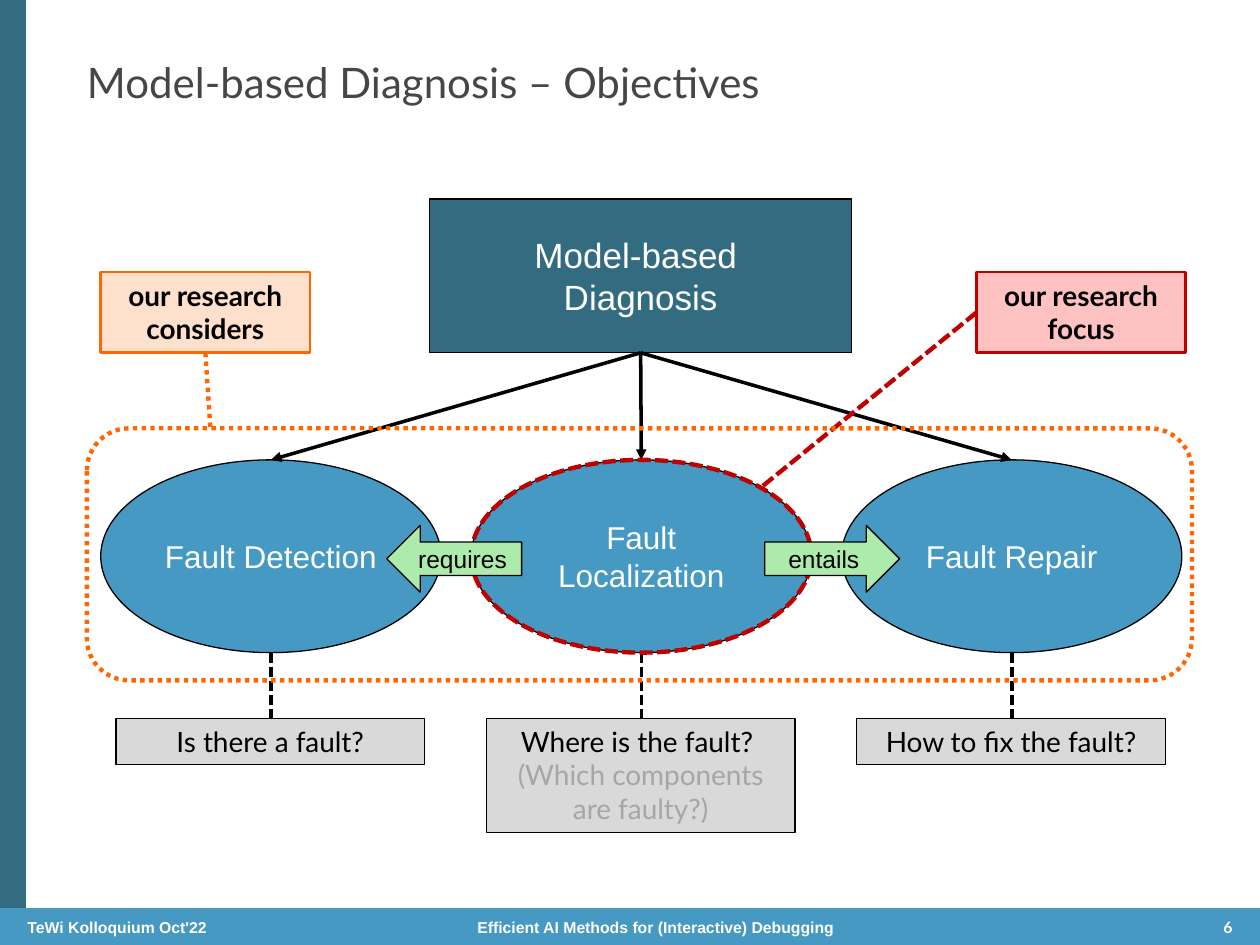
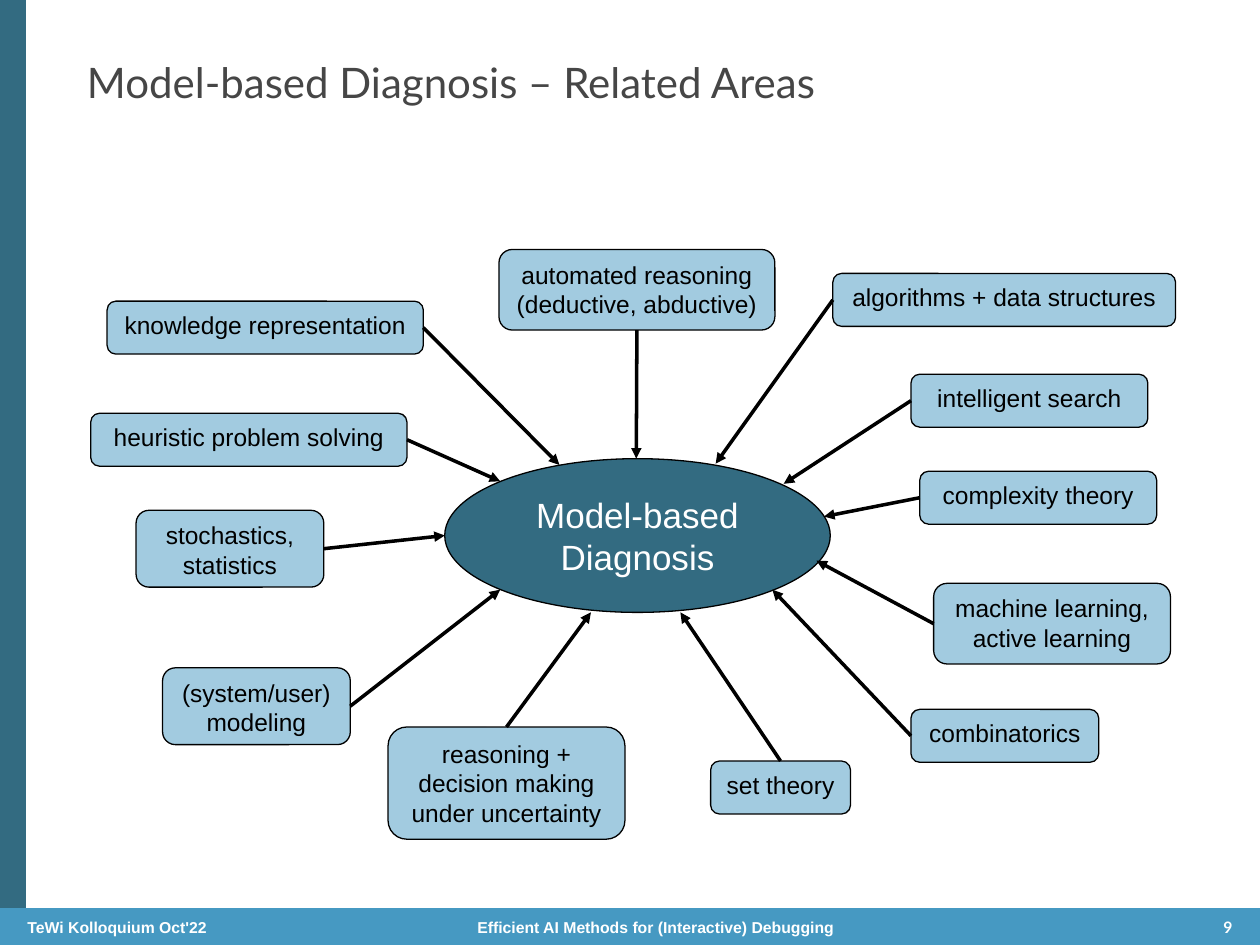
from lxml.etree import SubElement
from pptx import Presentation
from pptx.dml.color import RGBColor
from pptx.enum.dml import MSO_LINE
from pptx.enum.shapes import MSO_CONNECTOR, MSO_SHAPE
from pptx.enum.text import MSO_ANCHOR, PP_ALIGN
from pptx.oxml.ns import qn
from pptx.util import Inches, Pt

DARK, BLUE, BLACK, WHITE = "336B81", "4699C2", "000000", "FFFFFF"
TITLE_GREY, BOX_GREY, MUTED = "464646", "D9D9D9", "A6A6A6"
RED, PINK, ORANGE, PEACH, GREEN = "C00000", "FFC2C2", "FF6600", "FFE0CC", "ADEBAD"
DASH, DOT = MSO_LINE.SQUARE_DOT, MSO_LINE.ROUND_DOT

FOOTER = "TeWi Kolloquium Oct'22\tEfficient AI Methods for (Interactive) Debugging"

FAULT_STEPS = [
    ("Fault Detection", 0.37, ["Is there a fault?"]),
    ("Fault Localization", 0.91, ["Where is the fault? ", "(Which components are faulty?)"]),
    ("Fault Repair", 0.37, ["How to fix the fault?"]),
]

AREAS = [
    ("knowledge representation", (0.85, 2.39, 2.51, 0.42), "right", (4.44, 3.69)),
    ("automated reasoning\n(deductive, abductive)", (3.96, 1.98, 2.19, 0.64), "bottom", (5.05, 3.64)),
    ("heuristic problem solving", (0.72, 3.28, 2.51, 0.42), "right", (3.97, 3.82)),
    ("algorithms + data structures", (6.61, 2.17, 2.72, 0.42), "left", (5.68, 3.68)),
    ("complexity theory", (7.3, 3.74, 1.88, 0.42), "left", (6.54, 4.1)),
    ("machine learning, active learning", (7.41, 4.63, 1.88, 0.64), "left", (6.48, 4.45)),
    ("intelligent search", (7.23, 2.97, 1.88, 0.42), "left", (6.22, 3.84)),
    ("stochastics, statistics", (1.08, 4.05, 1.49, 0.61), "right", (3.53, 4.25)),
    ("(system/user)\vmodeling", (1.29, 5.3, 1.49, 0.61), "right", (3.97, 4.68)),
    ("reasoning +\vdecision making under uncertainty", (3.08, 5.77, 1.88, 0.89), "top", (4.69, 4.86)),
    ("combinatorics", (7.23, 5.63, 1.49, 0.42), "left", (6.13, 4.68)),
    ("set theory", (5.64, 6.04, 1.11, 0.42), "top", (5.4, 4.86)),
]


def rgb(value):
    """Turn a hex string into a colour."""
    return RGBColor.from_string(value)


def set_font(p, size, color, name="Arial", bold=False):
    """Format all text of a paragraph."""
    values = {"size": Pt(size), "name": name, "bold": bold}
    for r in p.runs:
        for key, value in values.items():
            setattr(r.font, key, value)
        r.font.color.rgb = rgb(color)


def write(sp, text, size, color, name="Arial", bold=False,
          align=PP_ALIGN.CENTER, anchor=MSO_ANCHOR.MIDDLE, margin=0.1):
    """Write text into a shape, one paragraph a line."""
    tf = sp.text_frame
    frame = {"word_wrap": True, "vertical_anchor": anchor,
             "margin_left": Inches(margin), "margin_right": Inches(margin)}
    for key, value in frame.items():
        setattr(tf, key, value)
    tf.text = text
    for p in tf.paragraphs:
        p.alignment = align
        set_font(p, size, color, name, bold)
    return tf


def style_line(line, color, width, dash=None):
    """Set colour, width and dash of a line."""
    line.color.rgb = rgb(color)
    line.width = Pt(width)
    if dash:
        line.dash_style = dash


def add_box(s, kind, box, fill=None, line=BLACK, width=0.75, dash=None, alpha=None):
    """Add a preset shape at left, top, width, height."""
    sp = s.shapes.add_shape(kind, *map(Inches, box))
    sp.shadow.inherit = False
    if fill:
        sp.fill.solid()
        sp.fill.fore_color.rgb = rgb(fill)
    else:
        sp.fill.background()
    if alpha:
        color = sp.fill._xPr.find(qn("a:solidFill"))[0]
        SubElement(color, qn("a:alpha"), val=str(alpha * 1000))
    style_line(sp.line, line, width, dash)
    return sp


def add_line(s, start, end, color=BLACK, width=2, dash=None, arrow=False):
    """Add a straight line, with an arrowhead at its end if asked."""
    c = s.shapes.add_connector(MSO_CONNECTOR.STRAIGHT, *map(Inches, start + end))
    style_line(c.line, color, width, dash)
    if arrow:
        SubElement(c.line._get_or_add_ln(), qn("a:tailEnd"), type="triangle")
    SubElement(c._element.spPr, qn("a:effectLst"))


def side_point(box, side):
    """Return the middle of one side of a box."""
    x, y, w, h = box
    return {"left": (x, y + h / 2), "right": (x + w, y + h / 2),
            "top": (x + w / 2, y), "bottom": (x + w / 2, y + h)}[side]


def add_footer(s, box, number):
    """Draw the bottom band with its text and page number."""
    x, y, w, h = box
    add_box(s, MSO_SHAPE.RECTANGLE, box, BLUE, BLUE)
    text_top, text_h = y - 0.05, h + 0.11
    sp = s.shapes.add_textbox(*map(Inches, (x + 0.12, text_top, 7.34, text_h)))
    tf = write(sp, FOOTER, 9, WHITE, bold=True, align=PP_ALIGN.LEFT)
    tabs = SubElement(tf.paragraphs[0]._p.get_or_add_pPr(), qn("a:tabLst"))
    SubElement(tabs, qn("a:tab"), pos=str(Inches(3.57)), algn="l")
    sp = s.shapes.add_textbox(*map(Inches, (x + w - 0.91, text_top, 0.79, text_h)))
    write(sp, str(number), 9, WHITE, "Lato", True, PP_ALIGN.RIGHT)


def add_slide(prs, title, number):
    """Add a slide with side band, footer and title."""
    s = prs.slides.add_slide(prs.slide_layouts[5])
    add_box(s, MSO_SHAPE.RECTANGLE, (0, 0, 0.2, 7.5), DARK, DARK)
    add_footer(s, (0, 7.21, 10, 0.29), number)
    sp = s.shapes.title
    for key, value in zip(("left", "top", "width", "height"), (0.59, 0.29, 6.93, 0.71)):
        setattr(sp, key, Inches(value))
    write(sp, title, 24, TITLE_GREY, "Lato", align=PP_ALIGN.LEFT)
    return s


def add_fault_step(s, box, origin, name, question_h, question):
    """Draw one fault ellipse, the arrow to it and the question below."""
    sp = add_box(s, MSO_SHAPE.OVAL, box, BLUE)
    write(sp, name, 18, WHITE)
    add_line(s, origin, side_point(box, "top"), arrow=True)
    x, y, w, h = box
    question_box = (x + 0.12, y + h + 0.52, w - 0.25, question_h)
    add_line(s, side_point(box, "bottom"), (x + w / 2, question_box[1]), dash=DASH)
    sp = add_box(s, MSO_SHAPE.RECTANGLE, question_box, BOX_GREY)
    tf = write(sp, "\n".join(question), 16, BLACK, "Lato", anchor=MSO_ANCHOR.TOP)
    for p in tf.paragraphs[1:]:
        set_font(p, 16, MUTED, "Lato")


def add_research_note(s, box, text, fill, color):
    """Draw a framed note on our research."""
    sp = add_box(s, MSO_SHAPE.RECTANGLE, box, fill, color, 1.5)
    write(sp, text, 16, BLACK, "Lato", True, anchor=MSO_ANCHOR.TOP)


def build_objectives(prs):
    """Build the slide on the objectives."""
    s = add_slide(prs, "Model-based Diagnosis – Objectives", 6)
    root = (3.41, 1.58, 3.35, 1.22)
    sp = add_box(s, MSO_SHAPE.RECTANGLE, root, DARK)
    write(sp, "Model-based \vDiagnosis", 20, WHITE)
    steps = [(0.8 + 2.94 * i, 3.65, 2.7, 1.53) for i in range(3)]
    for box, step in zip(steps, FAULT_STEPS):
        add_fault_step(s, box, side_point(root, "bottom"), *step)

    focus, considers = (7.75, 2.16, 1.66, 0.64), (0.8, 2.16, 1.66, 0.64)
    add_research_note(s, focus, "our research focus", PINK, RED)
    add_line(s, side_point(focus, "left"), (6.05, 3.86), RED, 2.5, DASH)
    add_box(s, MSO_SHAPE.OVAL, steps[1], None, RED, 2.5, DASH)
    add_research_note(s, considers, "our research considers", PEACH, ORANGE)
    add_box(s, MSO_SHAPE.ROUNDED_RECTANGLE, (0.69, 3.4, 8.77, 2), None, ORANGE, 2.5, DOT)
    add_line(s, side_point(considers, "bottom"), (1.67, 3.4), ORANGE, 2.5, DOT)

    for kind, x, text in ((MSO_SHAPE.LEFT_ARROW, 3.07, "requires"),
                          (MSO_SHAPE.RIGHT_ARROW, 6.07, "entails")):
        sp = add_box(s, kind, (x, 4.17, 1.07, 0.53), GREEN)
        write(sp, text, 14, BLACK, margin=0.05)


def add_area(s, text, box, side, tip):
    """Draw a related area and the arrow from one of its sides."""
    sp = add_box(s, MSO_SHAPE.ROUNDED_RECTANGLE, box, BLUE, alpha=50)
    write(sp, text, 14, BLACK, anchor=MSO_ANCHOR.TOP, margin=0.08)
    add_line(s, side_point(box, side), tip, arrow=True)


def build_related_areas(prs):
    """Build the slide on the related areas."""
    s = add_slide(prs, "Model-based Diagnosis – Related Areas", 9)
    sp = add_box(s, MSO_SHAPE.OVAL, (3.53, 3.64, 3.06, 1.22), DARK)
    write(sp, "Model-based Diagnosis", 20, WHITE)
    for area in AREAS:
        add_area(s, *area)


def main():
    """Build and save the presentation."""
    prs = Presentation()
    prs.slide_width, prs.slide_height = Inches(10), Inches(7.5)
    build_objectives(prs)
    build_related_areas(prs)
    prs.save("out.pptx")


if __name__ == "__main__":
    main()
